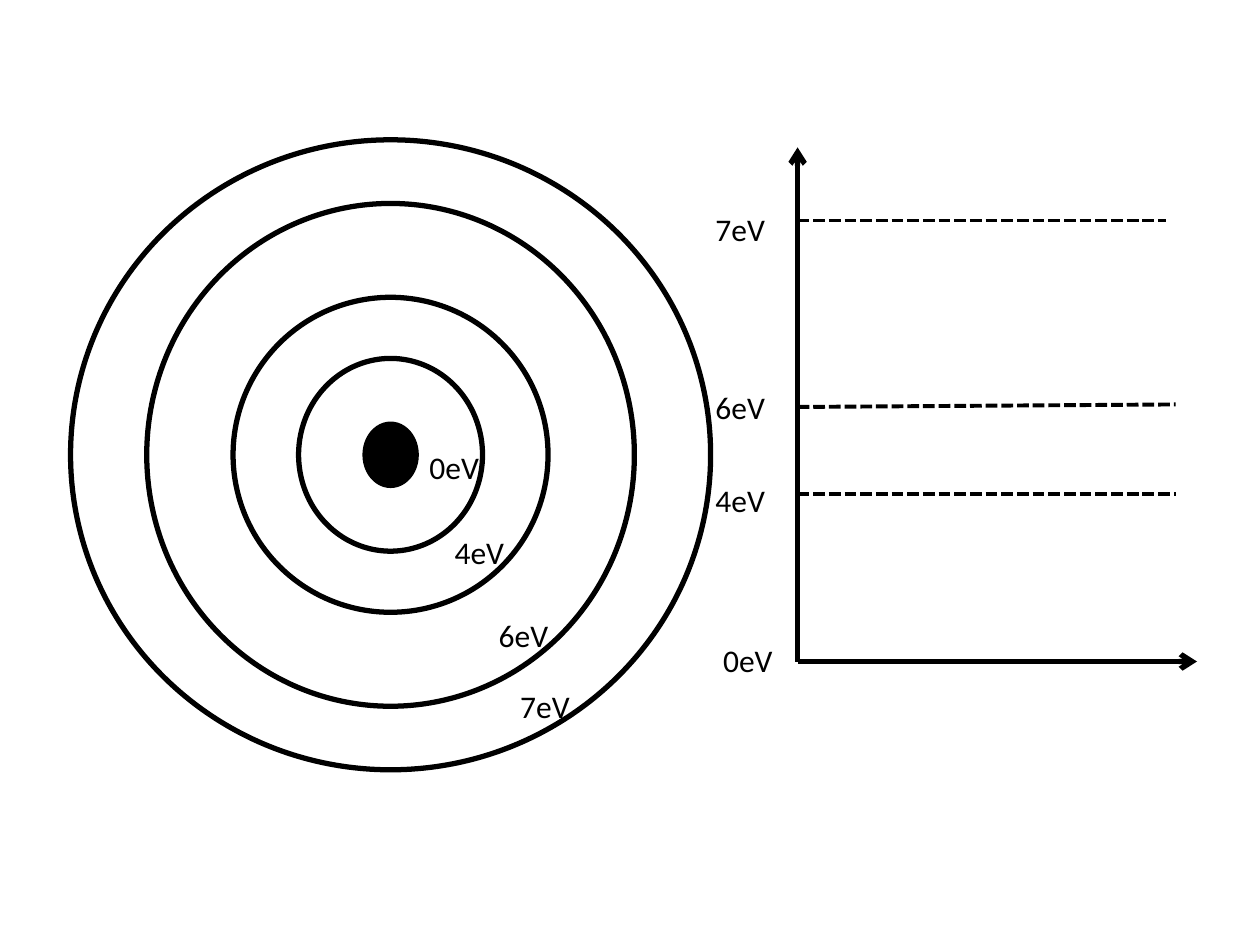
import pptx
import pptx.dml.color
import pptx.enum.dml
import pptx.enum.shapes
import pptx.enum.text
import pptx.oxml
import pptx.oxml.ns
import pptx.util
from pptx.util import Inches

BLACK, WHITE = "000000", "FFFFFF"
ORIGIN_X, ORIGIN_Y = 6.33, 5.25
CENTER_X, CENTER_Y = 3.1, 3.61
ORBITS = [(5.08, 5), (3.87, 3.99), (2.5, 2.5), (1.46, 1.53)]
ORBIT_LABELS = [("0eV", 3.31, 3.51), ("4eV", 3.51, 4.18),
                ("6eV", 3.86, 4.84), ("7eV", 4.03, 5.4)]
AXIS_LABELS = [("0eV", 5.64, 5.04), ("4eV", 5.58, 3.77),
               ("6eV", 5.58, 3.03), ("7eV", 5.58, 1.62)]
LEVELS = [(3.92, 9.33, 3.92), (3.23, 9.33, 3.21), (1.75, 9.25, 1.75)]


def rgb(color):
    return pptx.dml.color.RGBColor.from_string(color)


def set_line(line, width):
    line.color.rgb = rgb(BLACK)
    line.width = pptx.util.Pt(width)


def add_line(shapes, start, end, width):
    c = shapes.add_connector(pptx.enum.shapes.MSO_CONNECTOR.STRAIGHT,
                             *map(Inches, start + end))
    set_line(c.line, width)
    pptx.oxml.ns.qn("a:effectLst")
    sp_pr = c.line._get_or_add_ln().getparent()
    sp_pr.append(pptx.oxml.parse_xml(
        f'<a:effectLst {pptx.oxml.ns.nsdecls("a")}/>'))
    return c


def add_axis(shapes, end):
    c = add_line(shapes, (ORIGIN_X, ORIGIN_Y), end, 3)
    c.line._get_or_add_ln().append(pptx.oxml.parse_xml(
        f'<a:tailEnd {pptx.oxml.ns.nsdecls("a")} type="arrow"/>'))


def add_level(shapes, y, end_x, end_y):
    c = add_line(shapes, (ORIGIN_X, y), (end_x, end_y), 2.25)
    c.line.dash_style = pptx.enum.dml.MSO_LINE.SQUARE_DOT


def add_ellipse(shapes, width, height, fill, line_width):
    sp = shapes.add_shape(pptx.enum.shapes.MSO_SHAPE.OVAL,
                          Inches(CENTER_X - width / 2),
                          Inches(CENTER_Y - height / 2),
                          Inches(width), Inches(height))
    sp.shadow.inherit = False
    sp.fill.solid()
    sp.fill.fore_color.rgb = rgb(fill)
    set_line(sp.line, line_width)


def add_label(shapes, text, left, top):
    tf = shapes.add_textbox(Inches(left), Inches(top),
                            Inches(0.75), Inches(0.4)).text_frame
    tf.word_wrap = True
    tf.auto_size = pptx.enum.text.MSO_AUTO_SIZE.SHAPE_TO_FIT_TEXT
    tf.text = text
    font = tf.paragraphs[0].runs[0].font
    font.name = "Calibri"
    font.size = pptx.util.Pt(18)
    font.color.rgb = rgb(BLACK)


def add_diagram(shapes):
    add_axis(shapes, (ORIGIN_X, 1.17))
    add_axis(shapes, (9.5, ORIGIN_Y))
    for level in LEVELS:
        add_level(shapes, *level)


def add_atom(shapes):
    for width, height in ORBITS:
        add_ellipse(shapes, width, height, WHITE, 3)
    add_ellipse(shapes, 0.42, 0.5, BLACK, 2)
    for label in ORBIT_LABELS:
        add_label(shapes, *label)


def main():
    prs = pptx.Presentation()
    prs.slide_width, prs.slide_height = Inches(10), Inches(7.5)
    s = prs.slides.add_slide(prs.slide_layouts[6])
    add_diagram(s.shapes.add_group_shape().shapes)
    add_atom(s.shapes.add_group_shape().shapes)
    for label in AXIS_LABELS:
        add_label(s.shapes, *label)
    prs.save("out.pptx")


if __name__ == "__main__":
    main()
